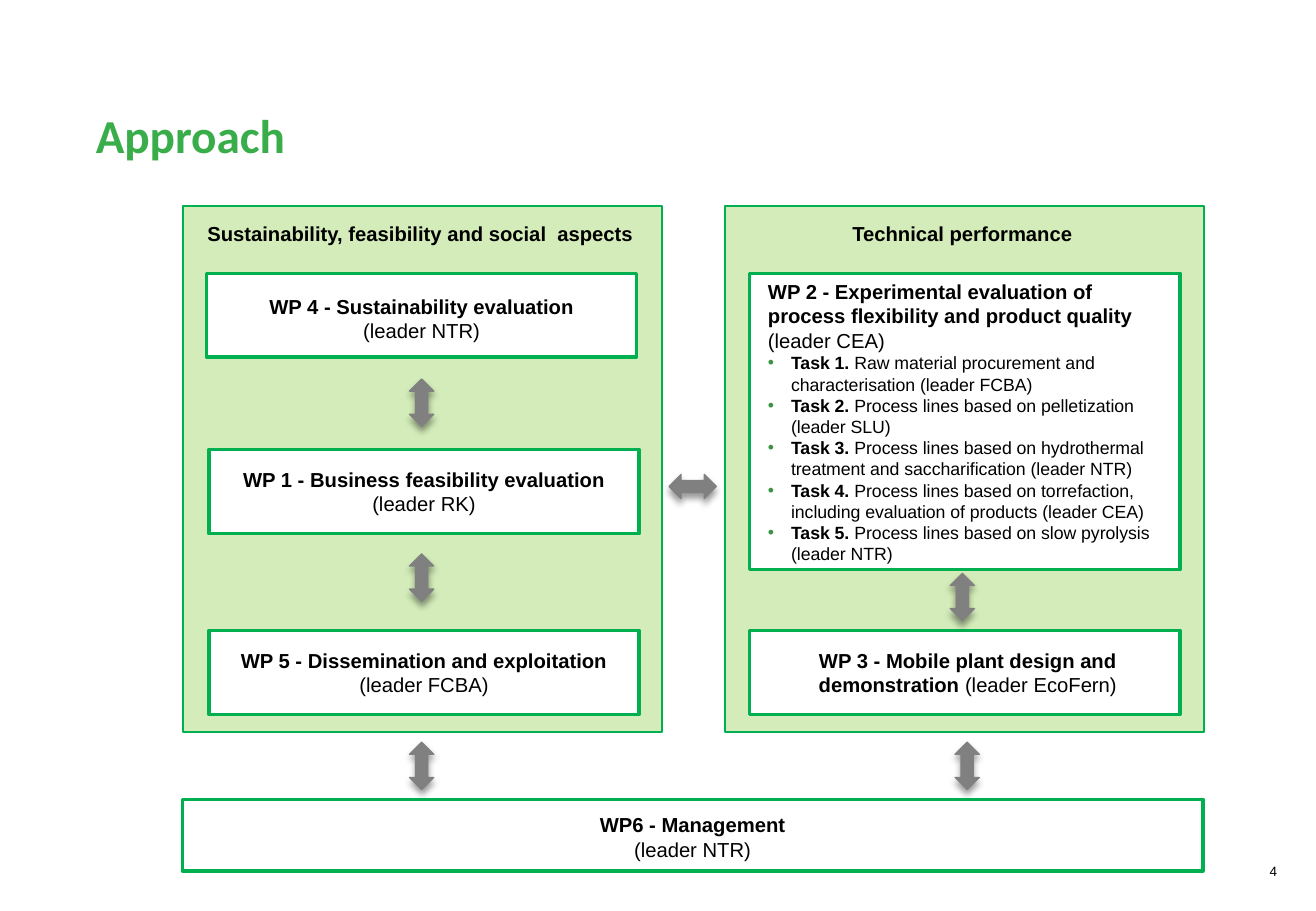
"""Build the Approach slide: two panels of work packages linked by arrows."""
from dataclasses import dataclass

from lxml.etree import SubElement
from pptx import Presentation
from pptx.dml.color import RGBColor
from pptx.enum.shapes import MSO_SHAPE as Preset
from pptx.enum.text import MSO_ANCHOR as Anchor, PP_ALIGN as Align
from pptx.oxml.ns import qn
from pptx.util import Inches, Pt

COLUMNS, ROWS = 1083, 750
WIDTH, HEIGHT = Inches(10.83), Inches(7.5)


@dataclass(frozen=True)
class Theme:
    """Colours, fonts and sizes of the slide."""
    black: str = "000000"
    white: str = "FFFFFF"
    title: str = "39AD4A"
    border: str = "00B050"
    panel: str = "D3ECB9"
    bullet: str = "3C9346"
    arrow: str = "808080"
    body_font: str = "Arial"
    title_font: str = "Calibri"
    title_size: float = 28
    body_size: float = 12
    task_size: float = 10.5
    number_size: float = 8
    panel_line: float = 1.25
    card_line: float = 2
    arrow_line: float = 0.75


THEME = Theme()


@dataclass(frozen=True)
class Area:
    """Left, top, width and height in grid columns and rows."""
    left: float
    top: float
    width: float
    height: float


@dataclass(frozen=True)
class Span:
    """A run of text."""
    text: str
    bold: bool = False


@dataclass(frozen=True)
class Para:
    """A paragraph of spans with its format."""
    spans: tuple[Span, ...]
    size: float = THEME.body_size
    align: Align = Align.CENTER
    bullet: bool = False
    font: str = THEME.body_font
    color: str = THEME.black


@dataclass(frozen=True)
class Card:
    """A white box that holds a work package."""
    area: Area
    paras: tuple[Para, ...]
    insets: tuple[float, float, float, float] = (10, 5, 10, 5)
    anchor: Anchor = Anchor.MIDDLE


def across(columns: float) -> int:
    """Length of a number of grid columns."""
    return round(WIDTH * columns / COLUMNS)


def down(rows: float) -> int:
    """Length of a number of grid rows."""
    return round(HEIGHT * rows / ROWS)


def place(area: Area) -> tuple[int, int, int, int]:
    """Turn a grid area into slide lengths."""
    return across(area.left), down(area.top), across(area.width), down(area.height)


def apply(target, values: dict) -> None:
    """Set every named attribute on the target."""
    for name, value in values.items():
        setattr(target, name, value)


def add_bullet(paragraph) -> None:
    """Give a paragraph a hanging green bullet."""
    properties = paragraph._p.get_or_add_pPr()
    hang = across(19)
    properties.set("marL", str(hang))
    properties.set("indent", str(-hang))
    color = SubElement(properties, qn("a:buClr"))
    SubElement(color, qn("a:srgbClr"), val=THEME.bullet)
    SubElement(properties, qn("a:buFont"), typeface=THEME.body_font)
    SubElement(properties, qn("a:buChar"), char="•")


def write(box, paras: tuple[Para, ...], anchor: Anchor = Anchor.MIDDLE,
          insets: tuple[float, float, float, float] = (10, 5, 10, 5)) -> None:
    """Fill a box with paragraphs."""
    left, top, right, bottom = insets
    frame = box.text_frame
    apply(frame, {"word_wrap": True, "vertical_anchor": anchor,
                  "margin_left": across(left), "margin_top": down(top),
                  "margin_right": across(right), "margin_bottom": down(bottom)})
    for index, para in enumerate(paras):
        paragraph = frame.add_paragraph() if index else frame.paragraphs[0]
        paragraph.alignment = para.align
        if para.bullet:
            add_bullet(paragraph)
        for span in para.spans:
            run = paragraph.add_run()
            run.text = span.text
            apply(run.font, {"name": para.font, "size": Pt(para.size), "bold": span.bold})
            run.font.color.rgb = RGBColor.from_string(para.color)


def add_text(page, area: Area, para: Para, anchor: Anchor = Anchor.MIDDLE) -> None:
    """Add a text box with one paragraph."""
    write(page.shapes.add_textbox(*place(area)), (para,), anchor)


def add_figure(page, preset: Preset, area: Area, fill: str, line: str, weight: float):
    """Add a filled and outlined shape without a shadow."""
    shape = page.shapes.add_shape(preset, *place(area))
    shape.shadow.inherit = False
    shape.fill.solid()
    shape.fill.fore_color.rgb = RGBColor.from_string(fill)
    shape.line.color.rgb = RGBColor.from_string(line)
    shape.line.width = Pt(weight)
    return shape


def add_arrow(page, left: float, top: float, rotation: float = 0) -> None:
    """Add a grey double arrow with a soft shadow below."""
    arrow = add_figure(page, Preset.UP_DOWN_ARROW, Area(left, top, 20, 39),
                       THEME.arrow, THEME.arrow, THEME.arrow_line)
    arrow.rotation = rotation
    effects = arrow._element.spPr.find(qn("a:effectLst"))
    shadow = SubElement(effects, qn("a:outerShdw"), blurRad=str(Pt(4)), dist=str(Pt(3)),
                        dir="5400000", rotWithShape="0")
    color = SubElement(shadow, qn("a:srgbClr"), val=THEME.black)
    SubElement(color, qn("a:alpha"), val="40000")


def package(name: str, leader: str) -> tuple[Para, ...]:
    """Name and leader of a work package on two lines."""
    return Para((Span(name, True),)), Para((Span(leader),))


PANELS = ("Sustainability, feasibility and social  aspects", "Technical performance")
TASKS = (
    "Raw material procurement and characterisation (leader FCBA)",
    "Process lines based on pelletization (leader SLU)",
    "Process lines based on hydrothermal treatment and saccharification (leader NTR)",
    "Process lines based on torrefaction, including evaluation of products (leader CEA)",
    "Process lines based on slow pyrolysis (leader NTR)",
)
EXPERIMENTS = (
    Para((Span("WP 2 - Experimental evaluation of process flexibility and product quality ", True),
          Span("(leader CEA)")), align=Align.LEFT),
    *(Para((Span(f"Task {number}. ", True), Span(task)), THEME.task_size, Align.LEFT, True)
      for number, task in enumerate(TASKS, 1)),
)
PLANT = (Para((Span("WP 3 - Mobile plant design and demonstration ", True),
               Span("(leader EcoFern)"))),)
CARDS = (
    Card(Area(170, 225, 354, 69), package("WP 4 - Sustainability evaluation", "(leader NTR)"),
         (10, 10, 10, 5)),
    Card(Area(172, 370, 354, 69), package("WP 1 - Business feasibility evaluation", "(leader RK)")),
    Card(Area(172, 519, 354, 69), package("WP 5 - Dissemination and exploitation", "(leader FCBA)")),
    Card(Area(617, 225, 354, 244), EXPERIMENTS, (15, 5, 14, 5), Anchor.TOP),
    Card(Area(617, 519, 354, 69), PLANT, (17, 5, 12, 5)),
    Card(Area(150, 658, 840, 59), package("WP6 - Management", "(leader NTR)"), (10, 8, 10, 5)),
)
ARROWS = ((337, 312), (337, 456), (337, 611), (782, 472), (786, 611), (560, 381, 270))


def main() -> None:
    """Draw the slide and save the deck."""
    deck = Presentation()
    apply(deck, {"slide_width": WIDTH, "slide_height": HEIGHT})
    page = deck.slides.add_slide(deck.slide_layouts[6])
    add_text(page, Area(69, 83, 918, 80),
             Para((Span("Approach", True),), THEME.title_size, Align.LEFT,
                  font=THEME.title_font, color=THEME.title), Anchor.TOP)
    for index, heading in enumerate(PANELS):
        left = 151 + 446 * index
        add_figure(page, Preset.RECTANGLE, Area(left, 170, 394, 433),
                   THEME.panel, THEME.border, THEME.panel_line)
        add_text(page, Area(left - 3, 175, 396, 34), Para((Span(heading, True),)))
    for card in CARDS:
        box = add_figure(page, Preset.RECTANGLE, card.area,
                         THEME.white, THEME.border, THEME.card_line)
        write(box, card.paras, card.anchor, card.insets)
    for arrow in ARROWS:
        add_arrow(page, *arrow)
    add_text(page, Area(828, 697, 233, 40), Para((Span("4"),), THEME.number_size, Align.RIGHT))
    deck.save("out.pptx")


if __name__ == "__main__":
    main()
